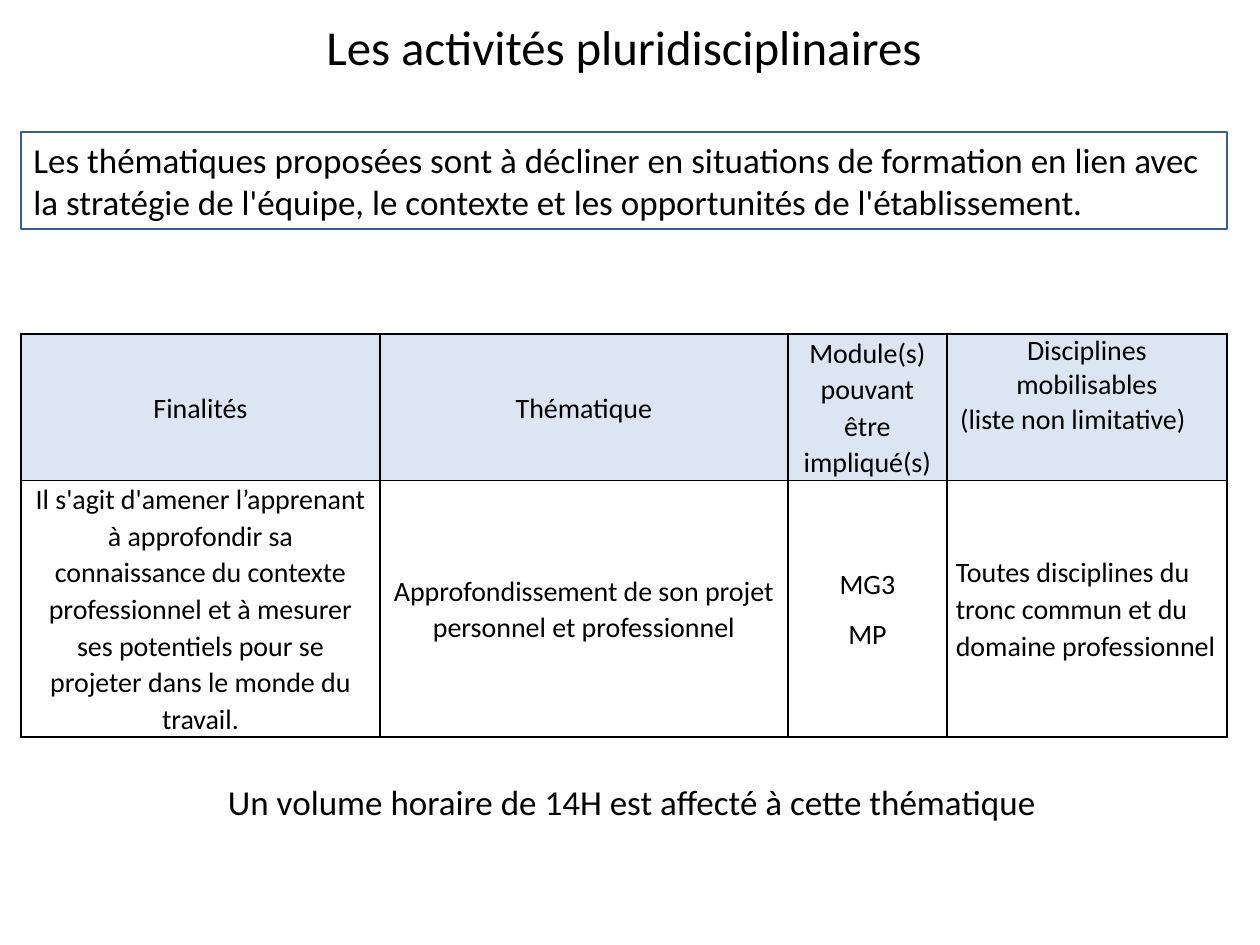
from dataclasses import dataclass

from lxml.etree import SubElement
from pptx import Presentation
from pptx.dml.color import RGBColor
from pptx.enum.shapes import MSO_SHAPE
from pptx.enum.text import MSO_ANCHOR, PP_ALIGN
from pptx.oxml.ns import qn
from pptx.util import Emu, Pt


@dataclass(frozen=True)
class Theme:
    font: str = "Calibri"
    title_size: float = 27.9
    body_size: int = 20
    table_size: int = 16
    ink: str = "000000"
    frame: str = "376092"
    header: str = "DCE6F2"
    paper: str = "FFFFFF"


theme = Theme()


def px(length):
    return Emu(round(length * 914400 / 126))


def write(frame, lines, size, align, spacing=None):
    """Fill a text frame with one paragraph per line and return the paragraphs."""
    frame.word_wrap = True
    for index, line in enumerate(lines):
        para = frame.add_paragraph() if index else frame.paragraphs[0]
        para.alignment = align
        para.line_spacing = spacing
        span = para.add_run()
        span.text = line
        span.font.name = theme.font
        span.font.size = Pt(size)
        span.font.color.rgb = RGBColor.from_string(theme.ink)
    return frame.paragraphs


deck = Presentation()
deck.slide_width, deck.slide_height = px(1260), px(945)
page = deck.slides.add_slide(deck.slide_layouts[5])
left, width = 21, 1206

# Title
title = page.shapes.title
title.left, title.top, title.width, title.height = px(left), px(28), px(width), px(84)
title.text_frame.vertical_anchor = MSO_ANCHOR.TOP
title.text_frame.margin_top = 0
write(title.text_frame, ["Les activités pluridisciplinaires"],
      theme.title_size, PP_ALIGN.CENTER, 0.8)

# Framed introduction
intro = page.shapes.add_shape(MSO_SHAPE.RECTANGLE, px(left), px(132), px(width), px(97))
intro.shadow.inherit = False
intro.fill.background()
intro.line.color.rgb = RGBColor.from_string(theme.frame)
intro.line.width = Pt(0.75)
write(intro.text_frame,
      ["Les thématiques proposées sont à décliner en situations de formation en lien avec "
       "la stratégie de l'équipe, le contexte et les opportunités de l'établissement."],
      theme.body_size, PP_ALIGN.LEFT)

# Table of activities
column_widths = [359, 408, 159, 280]
row_heights = [144, 251]
rows = [
    [["Finalités"], ["Thématique"], ["Module(s) pouvant être impliqué(s)"],
     ["Disciplines mobilisables", "(liste non limitative)"]],
    [["Il s'agit d'amener l’apprenant à approfondir sa connaissance du contexte "
      "professionnel et à mesurer ses potentiels pour se projeter dans le monde du travail."],
     ["Approfondissement de son projet personnel et professionnel"],
     ["MG3", "MP"],
     ["Toutes disciplines du tronc commun et du domaine professionnel"]],
]
table = page.shapes.add_table(len(rows), len(column_widths), px(left), px(334),
                              px(width), px(sum(row_heights))).table
for column, column_width in zip(table.columns, column_widths):
    column.width = px(column_width)
for row, row_height in zip(table.rows, row_heights):
    row.height = px(row_height)

for row_index, row in enumerate(rows):
    for column_index, lines in enumerate(row):
        cell = table.cell(row_index, column_index)
        cell.vertical_anchor = MSO_ANCHOR.MIDDLE
        cell.margin_left = cell.margin_right = px(9)
        cell.margin_top = cell.margin_bottom = 0
        properties = cell._tc.get_or_add_tcPr()
        for side in ("a:lnL", "a:lnR", "a:lnT", "a:lnB"):
            border = SubElement(properties, qn(side), w=str(Pt(1)))
            SubElement(SubElement(border, qn("a:solidFill")), qn("a:srgbClr"), val=theme.ink)
        cell.fill.solid()
        cell.fill.fore_color.rgb = RGBColor.from_string(
            theme.paper if row_index else theme.header)
        is_list = row_index == 1 and column_index == 3
        write(cell.text_frame, lines, theme.table_size,
              PP_ALIGN.LEFT if is_list else PP_ALIGN.CENTER, 1.07)

table.cell(1, 2).text_frame.paragraphs[0].space_after = Pt(8)

# The disciplines heading sits at the top, its second line shifted left
disciplines = table.cell(0, 3)
disciplines.vertical_anchor = MSO_ANCHOR.TOP
for para in disciplines.text_frame.paragraphs:
    para.line_spacing = 1.0
para._p.get_or_add_pPr().set("marR", str(px(28)))

# Closing remark
remark = page.shapes.add_textbox(px(left), px(774), px(1222), px(55))
write(remark.text_frame, ["Un volume horaire de 14H est affecté à cette thématique"],
      theme.body_size, PP_ALIGN.CENTER)

deck.save("out.pptx")
